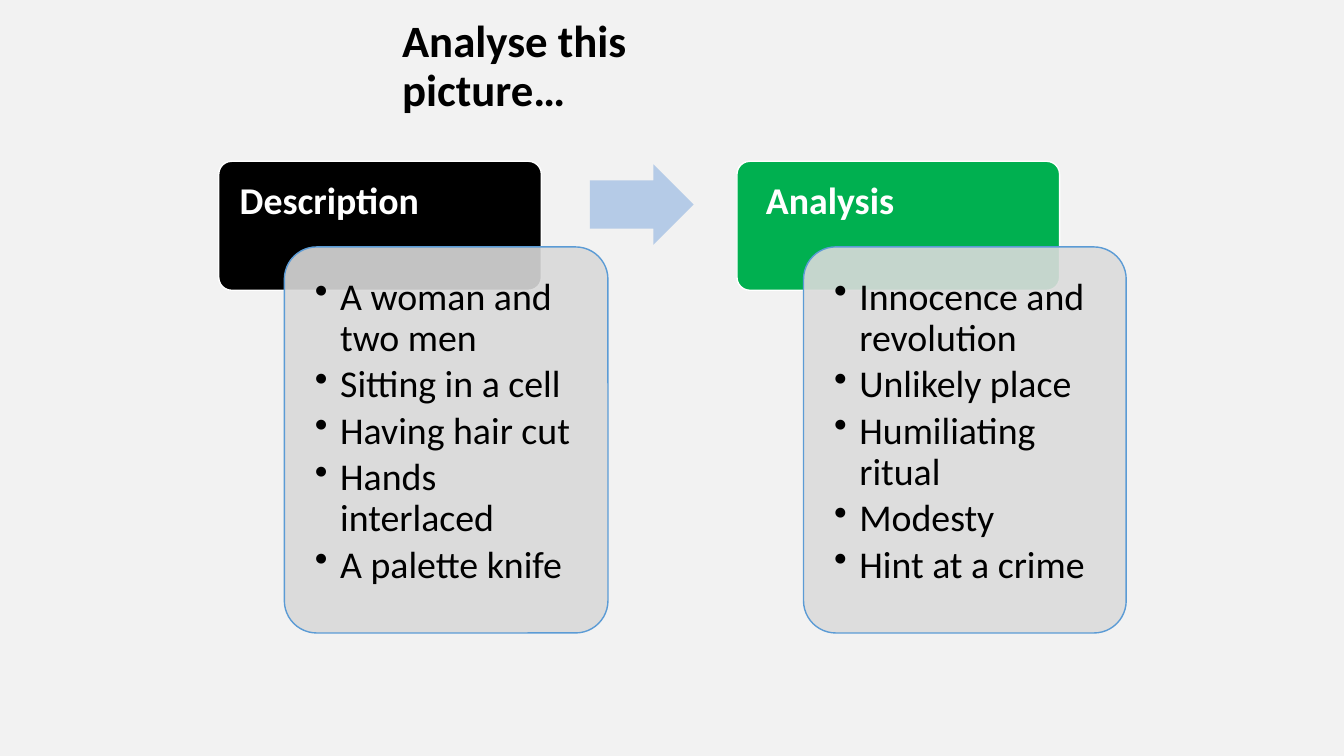
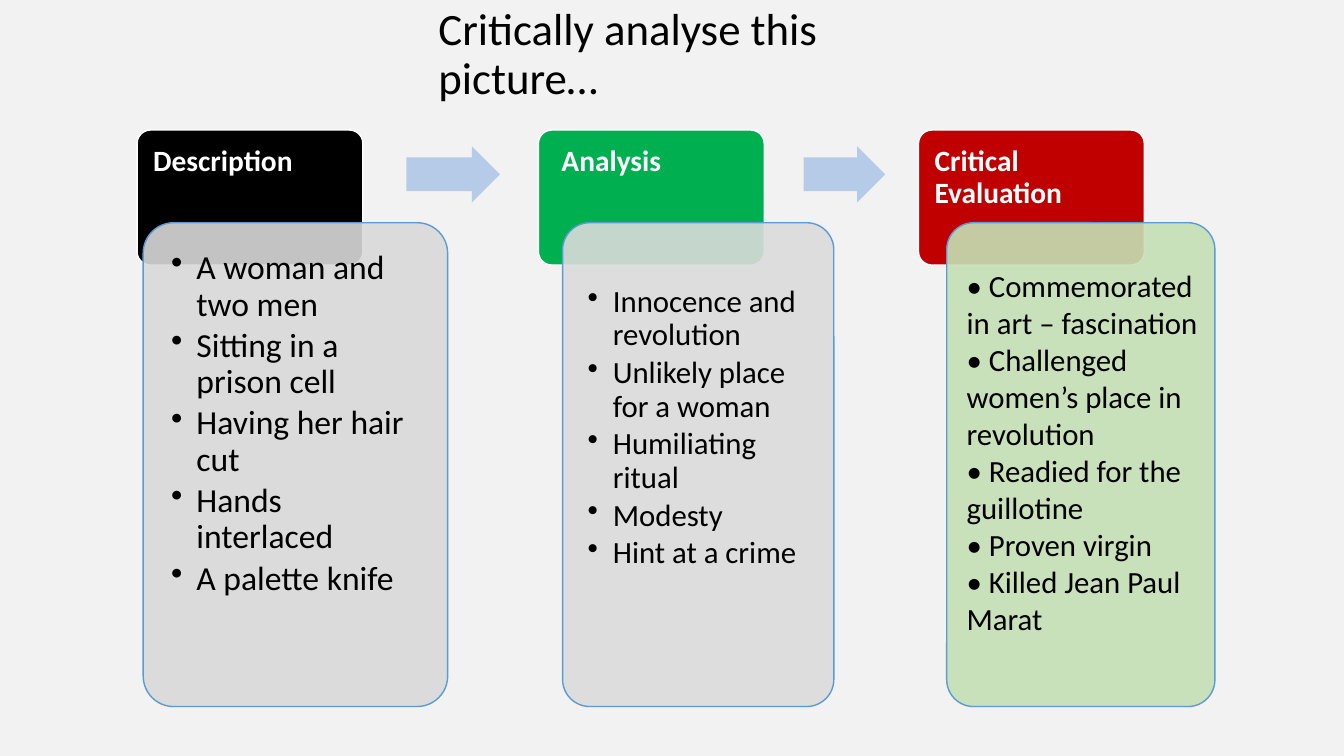
from dataclasses import dataclass

from lxml import etree
from pptx import Presentation
from pptx.dml.color import RGBColor
from pptx.enum.shapes import MSO_SHAPE
from pptx.enum.text import MSO_ANCHOR
from pptx.oxml.ns import qn
from pptx.util import Inches, Pt

FONT = "Calibri"
BACKGROUND = "F2F2F2"
BLACK = "000000"
WHITE = "FFFFFF"
GREEN = "00B050"
RED = "C00000"
GREY = "D9D9D9"
LIGHT_GREY = "DBDBDB"
LIGHT_GREEN = "C5E0B4"
PANEL_EDGE = "5B9BD5"
ARROW_BLUE = "B5CBE7"


@dataclass
class Box:
    left: float
    top: float
    width: float
    height: float

    def lengths(self):
        return [Inches(value) for value in (self.left, self.top, self.width, self.height)]


@dataclass
class Column:
    heading: str
    heading_fill: str
    points: list
    panel_fill: str
    panel_offset: float
    panel_width: float
    size: int
    insets: tuple
    hanging: bool = True
    heading_indent: float = 0


@dataclass
class Heading:
    width: float
    height: float
    size: int
    inset: float


def color(hex_text):
    return RGBColor.from_string(hex_text)


def write(frame, lines, size=24, ink=BLACK, bold=False, insets=(0.1, 0.05, 0.1, 0.05),
          anchor=MSO_ANCHOR.TOP, spacing=0.9, after=0, hanging=False, indent=0):
    frame.word_wrap = True
    frame.vertical_anchor = anchor
    frame.margin_left, frame.margin_top, frame.margin_right, frame.margin_bottom = map(Inches, insets)
    for index, line in enumerate(lines):
        para = frame.add_paragraph() if index else frame.paragraphs[0]
        para.alignment = 1
        para.line_spacing = spacing
        para.space_after = Pt(after)
        properties = para._p.get_or_add_pPr()
        if hanging:
            properties.set("marL", str(Inches(0.25)))
            properties.set("indent", str(-Inches(0.25)))
            etree.SubElement(properties, qn("a:buChar")).set("char", "•")
        elif indent:
            properties.set("marL", str(Inches(indent)))
        span = para.add_run()
        span.text = line
        span.font.name = FONT
        span.font.size = Pt(size)
        span.font.bold = bold
        span.font.color.rgb = color(ink)


def add_block(page, kind, box, fill, edge=None, opacity=100, adjustments=(0.1,)):
    block = page.shapes.add_shape(kind, *box.lengths())
    block.shadow.inherit = False
    for index, value in enumerate(adjustments):
        block.adjustments[index] = value
    block.fill.solid()
    block.fill.fore_color.rgb = color(fill)
    if opacity < 100:
        tint = block.fill._xPr.find(qn("a:solidFill"))[0]
        etree.SubElement(tint, qn("a:alpha")).set("val", str(opacity * 1000))
    if edge:
        block.line.color.rgb = color(edge)
        block.line.width = Pt(1)
    else:
        block.line.fill.background()
    return block


def add_column(page, box, heading, column):
    header_box = Box(box.left, box.top, heading.width, heading.height)
    header = add_block(page, MSO_SHAPE.ROUNDED_RECTANGLE, header_box, column.heading_fill, edge=WHITE)
    write(header.text_frame, [column.heading], size=heading.size, ink=WHITE, bold=True,
          insets=(heading.inset,) * 4, indent=column.heading_indent)
    drop = box.height - box.width
    panel_box = Box(box.left + column.panel_offset, box.top + drop, column.panel_width, box.width)
    panel = add_block(page, MSO_SHAPE.ROUNDED_RECTANGLE, panel_box, column.panel_fill,
                      edge=PANEL_EDGE, opacity=90)
    write(panel.text_frame, column.points, size=column.size, insets=column.insets,
          spacing=0.9 if column.hanging else 1, after=column.size * 0.15 if column.hanging else 0,
          hanging=column.hanging)


def add_arrow(page, box):
    add_block(page, MSO_SHAPE.RIGHT_ARROW, box, ARROW_BLUE, adjustments=(0.6, 0.5))


def add_title(page, box, text, bold):
    title = page.shapes.add_textbox(*box.lengths())
    write(title.text_frame, [text], size=32, bold=bold, anchor=MSO_ANCHOR.MIDDLE)


def add_page(deck, title, title_box, bold, heading, top, drop, panel_height, columns, arrows):
    page = deck.slides.add_slide(deck.slide_layouts[6])
    page.background.fill.solid()
    page.background.fill.fore_color.rgb = color(BACKGROUND)
    for left, column in columns:
        add_column(page, Box(left, top, panel_height, drop + panel_height), heading, column)
    for arrow_box in arrows:
        add_arrow(page, arrow_box)
    add_title(page, title_box, title, bold)


def main():
    deck = Presentation()
    deck.slide_width = Inches(13.33)
    deck.slide_height = Inches(7.5)

    even = (0.21,) * 4
    add_page(
        deck, "Analyse this picture…", Box(3.89, 0.17, 3, 1), True,
        Heading(3.2, 1.28, 27, 0.17), 1.6, 0.85, 3.83,
        [
            (2.17, Column("Description", BLACK,
                          ["A woman and two men", "Sitting in a cell", "Having hair cut",
                           "Hands interlaced", "A palette knife"],
                          GREY, 0.65, 3.21, 27, even)),
            (7.31, Column("Analysis", GREEN,
                          ["Innocence and revolution", "Unlikely place", "Humiliating ritual",
                           "Modesty", "Hint at a crime"],
                          LIGHT_GREY, 0.66, 3.2, 27, even, heading_indent=0.08)),
        ],
        [Box(5.85, 1.63, 1.03, 0.8)],
    )
    add_page(
        deck, "Critically analyse this picture…", Box(4.25, 0.05, 4.5, 1), False,
        Heading(2.24, 1.34, 21, 0.12), 1.29, 0.92, 4.8,
        [
            (1.36, Column("Description", BLACK,
                          ["A woman and two men", "Sitting in a prison cell", "Having her hair cut",
                           "Hands interlaced", "A palette knife"],
                          GREY, 0.06, 3.02, 24, (0.19,) * 4)),
            (5.34, Column("Analysis", GREEN,
                          ["Innocence and revolution", "Unlikely place for a woman",
                           "Humiliating ritual", "Modesty", "Hint at a crime"],
                          LIGHT_GREY, 0.24, 2.69, 22, (0.17, 0.55, 0.17, 0.17),
                          heading_indent=0.07)),
            (9.11, Column("Critical Evaluation", RED,
                          ["• Commemorated in art – fascination",
                           "• Challenged women’s place in revolution",
                           "• Readied for the guillotine", "• Proven virgin",
                           "• Killed Jean Paul Marat"],
                          LIGHT_GREEN, 0.28, 2.66, 22, (0.12, 0.36, 0.02, 0.05), hanging=False)),
        ],
        [Box(4.03, 1.45, 0.93, 0.56), Box(7.97, 1.45, 0.81, 0.56)],
    )
    deck.save("out.pptx")


if __name__ == "__main__":
    main()
